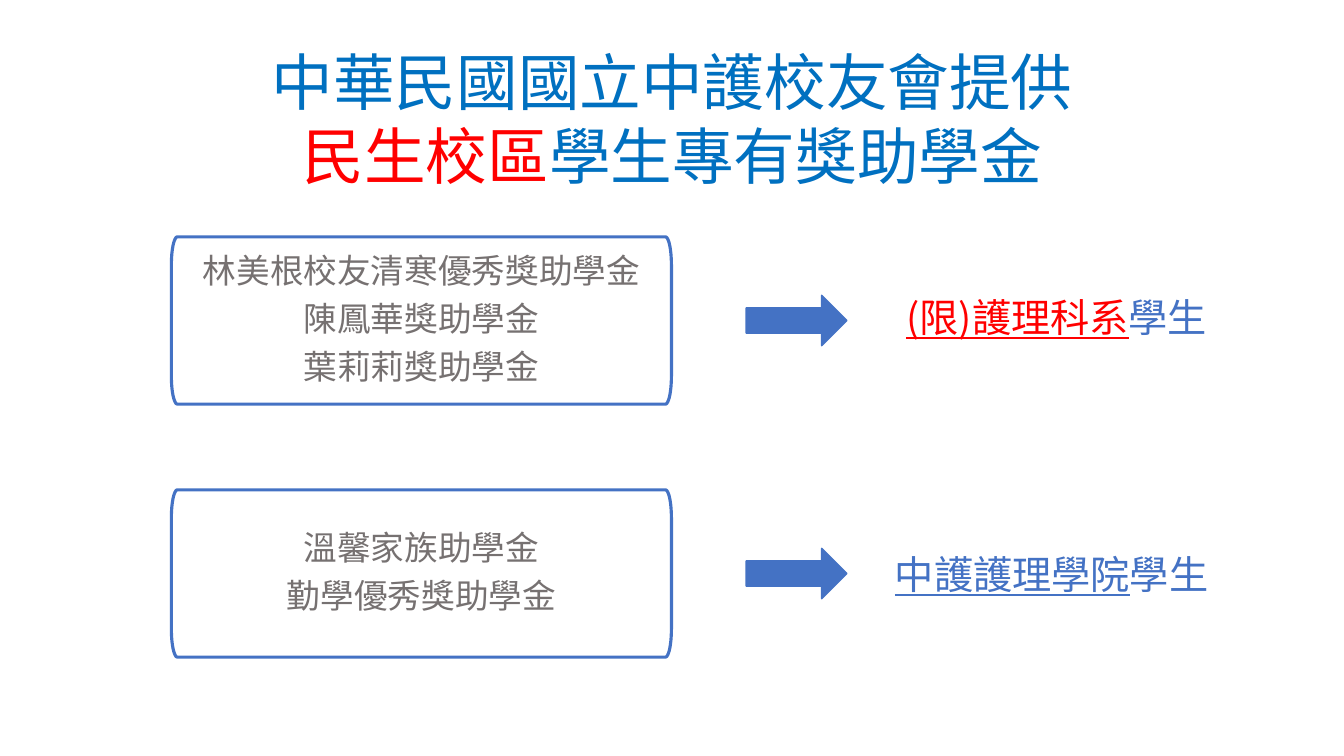
import math
from dataclasses import dataclass

import pptx
import pptx.util
from lxml import etree
from pptx.dml.color import RGBColor
from pptx.enum.shapes import MSO_SHAPE
from pptx.enum.text import MSO_ANCHOR, MSO_AUTO_SIZE, PP_ALIGN
from pptx.oxml.ns import qn
from pptx.util import Inches


@dataclass(frozen=True)
class Theme:
    font: str = "Noto Sans CJK JP"
    title: str = "0070C0"
    stress: str = "FF0000"
    accent: str = "4472C4"
    grey: str = "767171"
    title_size: int = 44
    group_size: int = 28
    award_size: int = 24


THEME = Theme()

# Each row: scholarships, then the students who may apply
ROWS = [
    dict(
        top=2.35,
        awards=["林美根校友清寒優秀獎助學金", "陳鳳華獎助學金", "葉莉莉獎助學金"],
        group=[("(限)護理科系", THEME.stress, True), ("學生", THEME.accent, False)],
        group_at=(8.84, 2.86, 3.28, 0.57),
    ),
    dict(
        top=4.86,
        awards=["溫馨家族助學金", "勤學優秀獎助學金"],
        group=[("中護護理學院", THEME.accent, True), ("學生", THEME.accent, False)],
        group_at=(8.75, 5.41, 3.36, 0.57),
    ),
]
CARD_LEFT, CARD_WIDTH, CARD_HEIGHT = 1.7, 4.96, 1.66
CORNER_X, CORNER_Y = 0.06, 0.28
ARROW_LEFT, ARROW_WIDTH, ARROW_HEIGHT = 7.4, 1, 0.5


def write(shape, paragraphs, *, size, anchor=MSO_ANCHOR.TOP, spacing=None, after=0):
    """Fill a shape with centred paragraphs of (text, colour, underline) spans."""
    frame = shape.text_frame
    frame.word_wrap = True
    frame.vertical_anchor = anchor
    for index, spans in enumerate(paragraphs):
        para = frame.add_paragraph() if index else frame.paragraphs[0]
        para.alignment = PP_ALIGN.CENTER
        para.space_after = pptx.util.Pt(after)
        if spacing:
            para.line_spacing = spacing
        for text, colour, underline in spans:
            if text == "\n":
                para.add_line_break()
                continue
            span = para.add_run()
            span.text = text
            span.font.name = THEME.font
            span.font.size = pptx.util.Pt(size)
            span.font.underline = underline
            span.font.color.rgb = RGBColor.from_string(colour)
            east_asian = etree.Element(qn("a:ea"), typeface=THEME.font)
            span.font._element.find(qn("a:latin")).addnext(east_asian)
    return frame


def add_text(page, at, paragraphs, **style):
    box = page.shapes.add_textbox(*map(Inches, at))
    return write(box, paragraphs, **style)


def outline(shape, width):
    shape.shadow.inherit = False
    shape.line.color.rgb = RGBColor.from_string(THEME.accent)
    shape.line.width = pptx.util.Pt(width)


def corner_points(left, top, width, height, steps=12):
    """Points around a rectangle with elliptical corners, clockwise."""
    right, bottom = left + width - CORNER_X, top + height - CORNER_Y
    left, top = left + CORNER_X, top + CORNER_Y
    centres = [(right, bottom), (left, bottom), (left, top), (right, top)]
    for quarter, (x, y) in enumerate(centres):
        for step in range(steps + 1):
            angle = (quarter + step / steps) * math.pi / 2
            yield x + CORNER_X * math.cos(angle), y + CORNER_Y * math.sin(angle)


def add_card(page, top, awards):
    points = [
        (Inches(x), Inches(y))
        for x, y in corner_points(CARD_LEFT, top, CARD_WIDTH, CARD_HEIGHT)
    ]
    builder = page.shapes.build_freeform(*points[0])
    builder.add_line_segments(points[1:], close=True)
    card = builder.convert_to_shape()
    card.fill.background()
    outline(card, 2.25)
    frame = write(
        card,
        [[(award, THEME.grey, False)] for award in awards],
        size=THEME.award_size,
        anchor=MSO_ANCHOR.MIDDLE,
        spacing=0.9,
        after=0.35 * THEME.award_size,
    )
    frame.margin_left = frame.margin_right = Inches(0.31)
    frame.margin_top = frame.margin_bottom = Inches(0.02)


def add_arrow(page, card_top):
    top = card_top + (CARD_HEIGHT - ARROW_HEIGHT) / 2
    at = (ARROW_LEFT, top, ARROW_WIDTH, ARROW_HEIGHT)
    arrow = page.shapes.add_shape(MSO_SHAPE.RIGHT_ARROW, *map(Inches, at))
    arrow.fill.solid()
    arrow.fill.fore_color.rgb = RGBColor.from_string(THEME.accent)
    outline(arrow, 1)


def main():
    deck = pptx.Presentation()
    deck.slide_width, deck.slide_height = Inches(13.33), Inches(7.5)
    page = deck.slides.add_slide(deck.slide_layouts[6])

    # Title
    title = [
        ("中華民國國立中護校友會提供", THEME.title, False),
        ("\n", THEME.title, False),
        ("民生校區", THEME.stress, False),
        ("學生專有獎助學金", THEME.title, False),
    ]
    add_text(page, (0.92, 0.22, 11.5, 1.9), [title],
             size=THEME.title_size, anchor=MSO_ANCHOR.MIDDLE)

    # Scholarships, arrows and eligible students
    for row in ROWS:
        add_card(page, row["top"], row["awards"])
        add_arrow(page, row["top"])
        frame = add_text(page, row["group_at"], [row["group"]], size=THEME.group_size)
        frame.auto_size = MSO_AUTO_SIZE.SHAPE_TO_FIT_TEXT

    deck.save("out.pptx")


if __name__ == "__main__":
    main()
